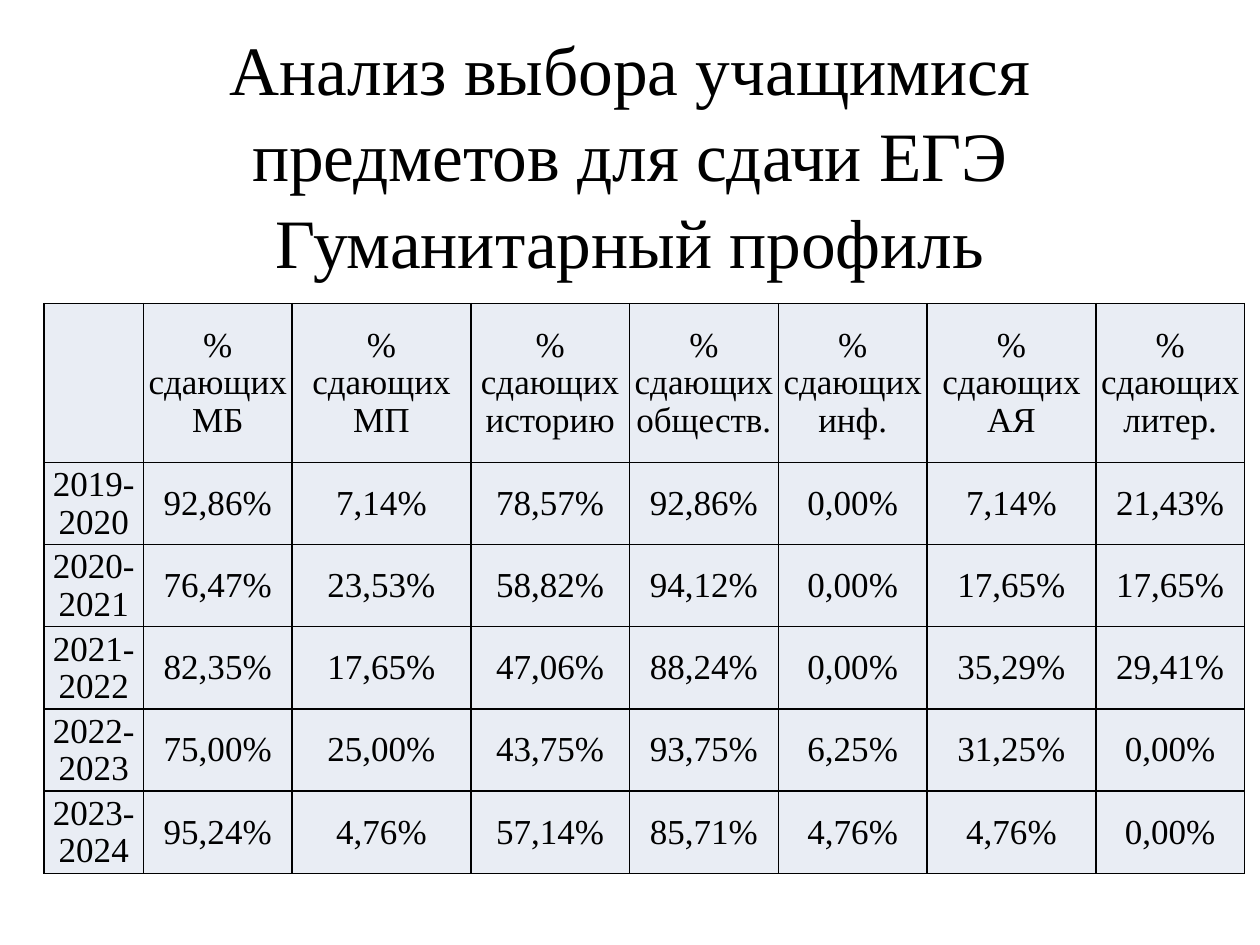
from dataclasses import dataclass

from lxml import etree
from pptx import Presentation
from pptx.dml.color import RGBColor
from pptx.enum.text import MSO_ANCHOR, PP_ALIGN
from pptx.oxml.ns import qn
from pptx.util import Cm, Pt

MIDDLE = MSO_ANCHOR.MIDDLE
CENTER = PP_ALIGN.CENTER
BLANK_LAYOUT = 6


@dataclass(frozen=True)
class Theme:
    font: str = "Times New Roman"
    ink: str = "000000"
    cell_fill: str = "E9EDF4"
    title_size: float = 39.6
    title_spacing: float = 1.04
    table_size: float = 20
    table_spacing: float = 0.96
    border_width: float = 1


class SlideBuilder:
    def __init__(self, slide, theme):
        self.slide = slide
        self.theme = theme

    def style_text(self, frame, size, spacing):
        for paragraph in frame.paragraphs:
            paragraph.alignment = CENTER
            paragraph.line_spacing = spacing
            for run in paragraph.runs:
                run.font.name = self.theme.font
                run.font.size = Pt(size)
                run.font.color.rgb = RGBColor.from_string(self.theme.ink)

    def title(self, text, left, top, width, height, bottom_inset):
        heading = self.slide.shapes.add_textbox(Cm(left), Cm(top), Cm(width), Cm(height))
        frame = heading.text_frame
        frame.word_wrap = True
        frame.vertical_anchor = MIDDLE
        frame.margin_bottom = Cm(bottom_inset)
        frame.text = text
        self.style_text(frame, self.theme.title_size, self.theme.title_spacing)

    def border(self, cell):
        properties = cell._tc.get_or_add_tcPr()
        for position, side in enumerate(("lnL", "lnR", "lnT", "lnB")):
            line = etree.Element(qn(f"a:{side}"), w=str(Pt(self.theme.border_width)))
            fill = etree.SubElement(line, qn("a:solidFill"))
            etree.SubElement(fill, qn("a:srgbClr"), val=self.theme.ink)
            properties.insert(position, line)

    def cell(self, cell, text):
        cell.text = text
        cell.vertical_anchor = MIDDLE
        cell.margin_left = cell.margin_right = cell.margin_top = Cm(0.03)
        cell.margin_bottom = 0
        cell.fill.solid()
        cell.fill.fore_color.rgb = RGBColor.from_string(self.theme.cell_fill)
        self.style_text(cell.text_frame, self.theme.table_size, self.theme.table_spacing)
        self.border(cell)

    def table(self, rows, left, top, widths, heights):
        table = self.slide.shapes.add_table(
            len(rows), len(widths), Cm(left), Cm(top), Cm(sum(widths)), Cm(sum(heights))
        ).table
        for column, width in zip(table.columns, widths):
            column.width = Cm(width)
        for row, height, texts in zip(table.rows, heights, rows):
            row.height = Cm(height)
            for cell, text in zip(row.cells, texts):
                self.cell(cell, text)


SUBJECTS = ["МБ", "МП", "историю", "обществ.", "инф.", "АЯ", "литер."]
SHARES = {
    "2019-2020": ["92,86%", "7,14%", "78,57%", "92,86%", "0,00%", "7,14%", "21,43%"],
    "2020-2021": ["76,47%", "23,53%", "58,82%", "94,12%", "0,00%", "17,65%", "17,65%"],
    "2021-2022": ["82,35%", "17,65%", "47,06%", "88,24%", "0,00%", "35,29%", "29,41%"],
    "2022-2023": ["75,00%", "25,00%", "43,75%", "93,75%", "6,25%", "31,25%", "0,00%"],
    "2023-2024": ["95,24%", "4,76%", "57,14%", "85,71%", "4,76%", "4,76%", "0,00%"],
}


def main():
    presentation = Presentation()
    presentation.slide_width = Cm(25.4)
    presentation.slide_height = Cm(19.05)
    slide = presentation.slides.add_slide(presentation.slide_layouts[BLANK_LAYOUT])
    builder = SlideBuilder(slide, Theme())

    builder.title(
        "Анализ выбора учащимися предметов для сдачи ЕГЭ\vГуманитарный профиль",
        left=1.27, top=1.73, width=22.86, height=4.19, bottom_inset=1.63,
    )

    header = [""] + [f"% сдающих {subject}" for subject in SUBJECTS]
    years = [[year] + shares for year, shares in SHARES.items()]
    builder.table(
        [header] + years,
        left=0.89, top=6.12,
        widths=[2, 3, 3.6, 3.2, 3, 3, 3.4, 3],
        heights=[3.2] + [1.6] * len(years),
    )
    presentation.save("out.pptx")


if __name__ == "__main__":
    main()
